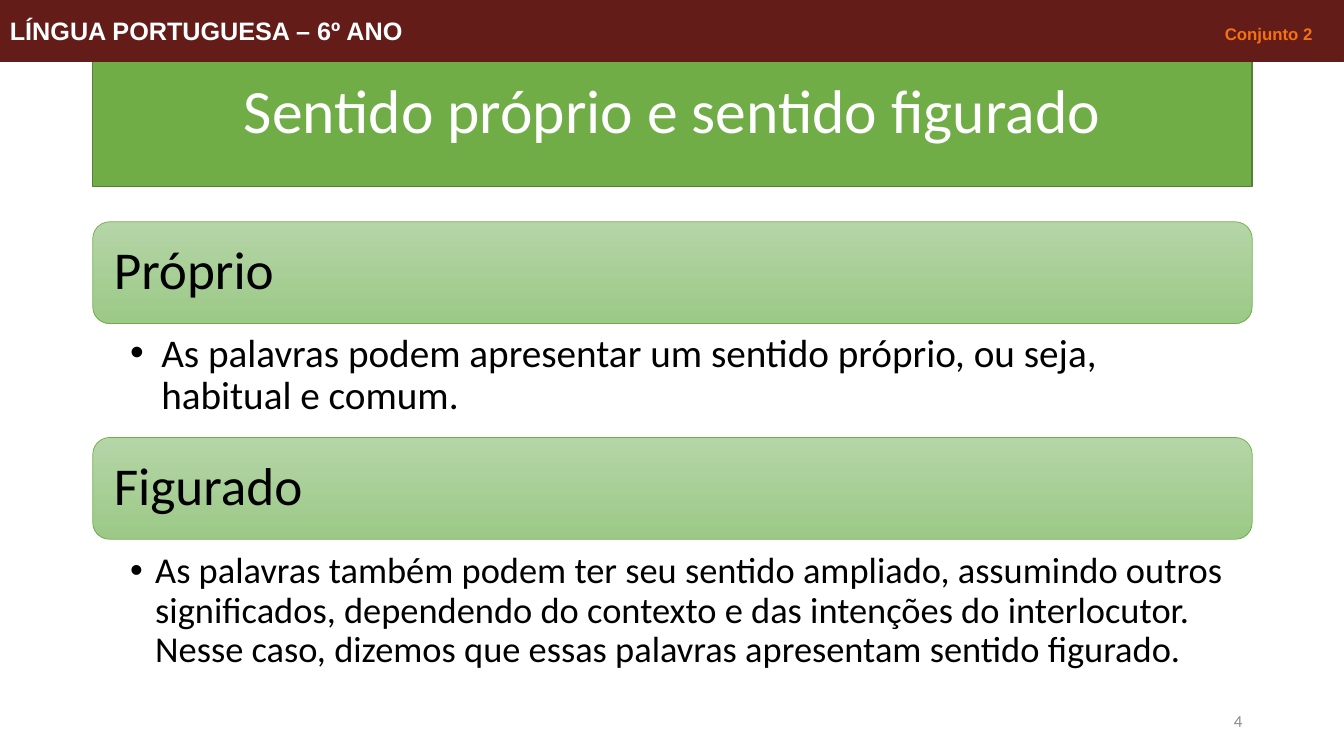
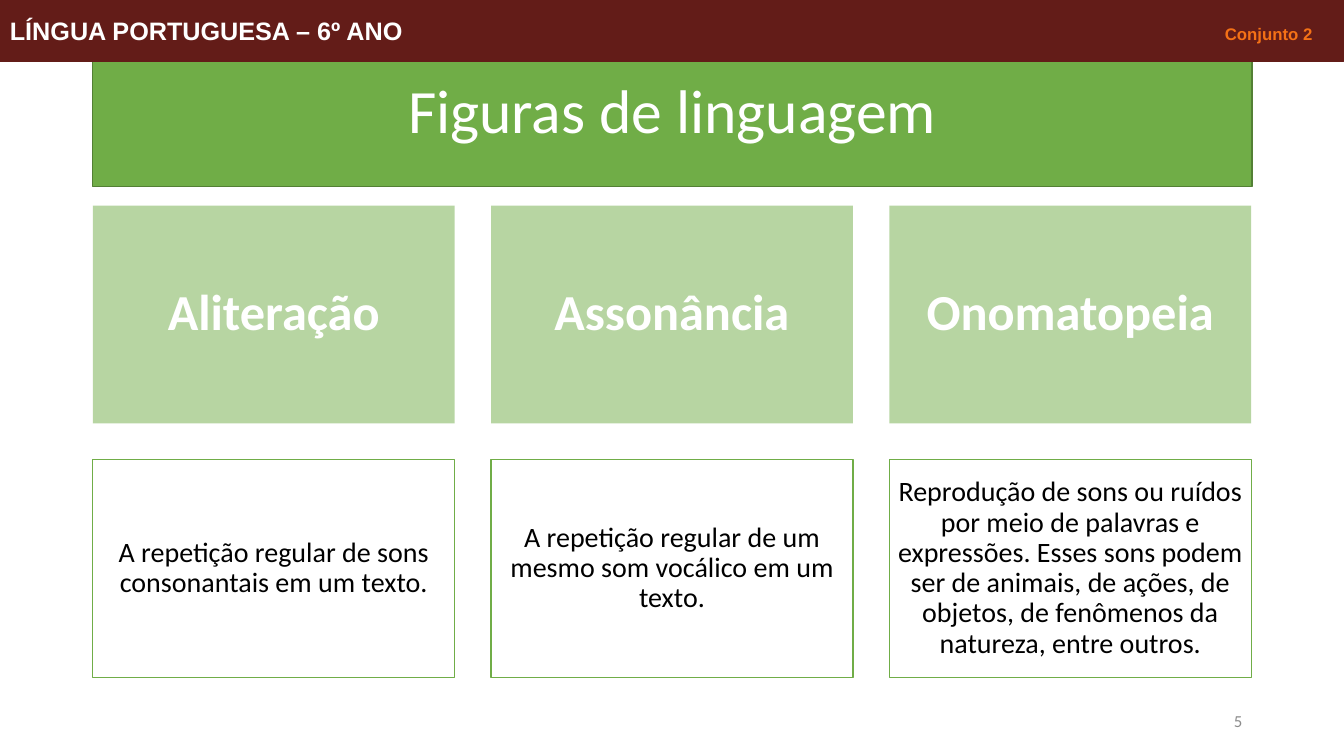
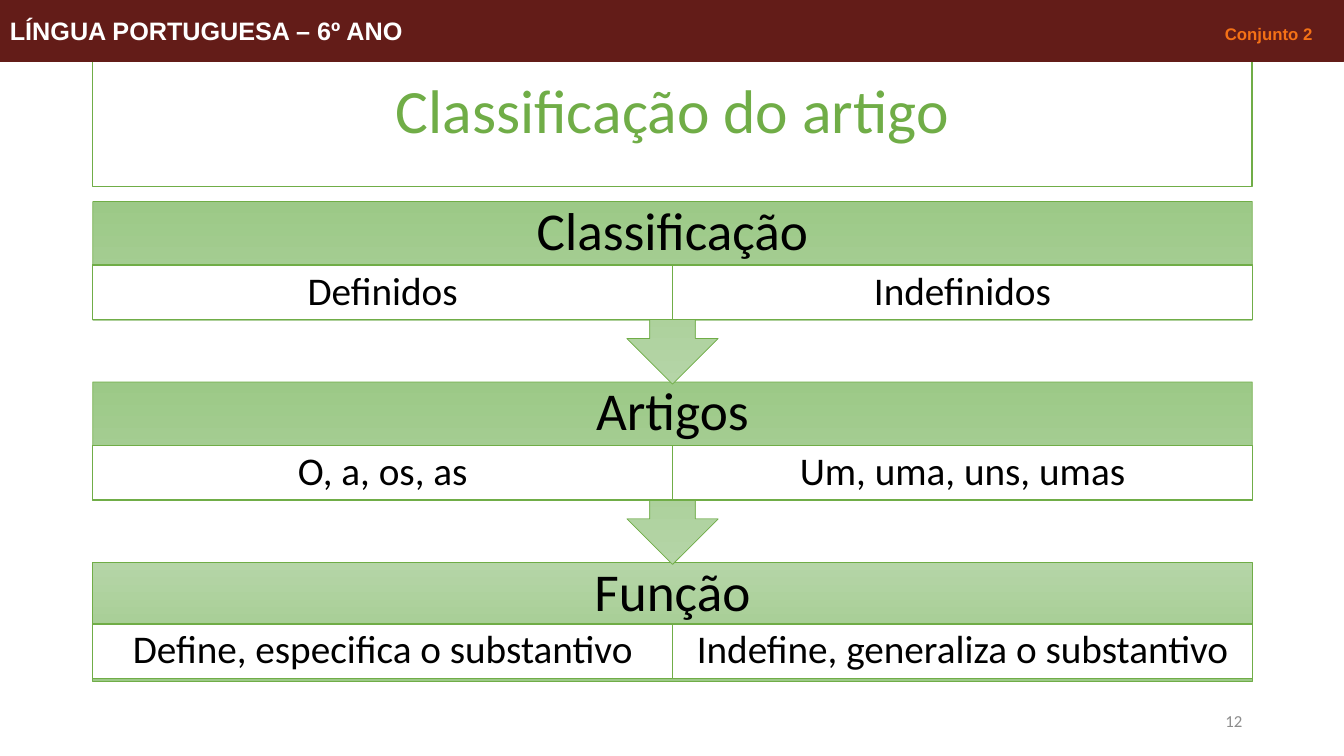
"""Builds three grammar slides with a shared header band, title box and page number."""
from lxml import etree
from pptx import Presentation
from pptx.dml.color import RGBColor
from pptx.enum.shapes import MSO_SHAPE
from pptx.enum.text import MSO_ANCHOR, PP_ALIGN
from pptx.oxml.ns import qn
from pptx.util import Inches, Pt

RECT = MSO_SHAPE.RECTANGLE
ROUND = MSO_SHAPE.ROUNDED_RECTANGLE
CALLOUT = MSO_SHAPE.UP_ARROW_CALLOUT
LEFT, CENTER, RIGHT = PP_ALIGN.LEFT, PP_ALIGN.CENTER, PP_ALIGN.RIGHT
TOP, MIDDLE = MSO_ANCHOR.TOP, MSO_ANCHOR.MIDDLE

COLORS = {
    "white": "FFFFFF",
    "black": "000000",
    "green": "70AD47",
    "edge": "538035",
    "light": "B5D5A7",
    "dark": "9CC987",
    "band": "631C18",
    "orange": "F47116",
    "gray": "8C8C8C",
}
MARGIN, WIDTH = 0.92, 11.5
PAD = (0.1, 0.05, 0.1, 0.05)


def rgb(name):
    return RGBColor.from_string(COLORS[name])


def add_box(slide, area, fill, line=None, weight=1, kind=RECT):
    box = slide.shapes.add_shape(kind, *map(Inches, area))
    box.shadow.inherit = False
    if fill == "shade":
        box.fill.gradient()
        box.fill.gradient_angle = 270
        for stop, name in zip(box.fill.gradient_stops, ("light", "dark")):
            stop.color.rgb = rgb(name)
    else:
        box.fill.solid()
        box.fill.fore_color.rgb = rgb(fill)
    if line:
        box.line.color.rgb = rgb(line)
        box.line.width = Pt(weight)
    else:
        box.line.fill.background()
    return box


def add_label(slide, area):
    return slide.shapes.add_textbox(*map(Inches, area))


def fade(box, share):
    color = box.fill._xPr.find(qn("a:solidFill"))[0]
    etree.SubElement(color, qn("a:alpha"), val=str(share * 1000))


def add_run(para, text, size, color, bold=False, font="Calibri"):
    run = para.add_run()
    run.text = text
    run.font.name = font
    run.font.size = Pt(size)
    run.font.bold = bold
    run.font.color.rgb = rgb(color)


def set_frame(box, align=CENTER, anchor=MIDDLE, pad=PAD, space=0.9):
    frame = box.text_frame
    frame.word_wrap = True
    frame.vertical_anchor = anchor
    frame.margin_left, frame.margin_top, frame.margin_right, frame.margin_bottom = map(Inches, pad)
    para = frame.paragraphs[0]
    para.alignment = align
    para.line_spacing = space
    return para


def set_bullet(para, indent):
    props = para._p.get_or_add_pPr()
    props.set("marL", str(Inches(indent)))
    props.set("indent", str(-Inches(indent)))
    etree.SubElement(props, qn("a:buFont"), typeface="Arial")
    etree.SubElement(props, qn("a:buChar"), char="•")


def set_tab(para, place):
    tabs = etree.SubElement(para._p.get_or_add_pPr(), qn("a:tabLst"))
    etree.SubElement(tabs, qn("a:tab"), pos=str(Inches(place)), algn="l")


def add_title(slide, text, fill="green", line="edge", color="white"):
    box = add_box(slide, (MARGIN, 0.4, WIDTH, 1.45), fill, line)
    add_run(set_frame(box), text, 44, color)


def add_band(slide):
    box = add_box(slide, (0, 0, 13.33, 0.61), "band", "band", 0.75)
    para = set_frame(box, LEFT, space=1.0)
    set_tab(para, 12.05)
    add_run(para, "LÍNGUA PORTUGUESA – 6º ANO\t", 18, "white", True, "Arial")
    add_run(para, "Conjunto 2", 12, "orange", True, "Arial")


def add_page(slide, number):
    label = add_label(slide, (9.42, 6.95, 3, 0.4))
    add_run(set_frame(label, RIGHT, space=1.0), str(number), 12, "gray")


def add_sense(slide, top, name):
    box = add_box(slide, (MARGIN, top, WIDTH, 1.01), "shade", "green", 0.5, ROUND)
    add_run(set_frame(box, LEFT, pad=(0.16,) * 4), name, 38, "black")


def add_point(slide, top, height, text, size, indent, pad):
    label = add_label(slide, (MARGIN, top, WIDTH, height))
    para = set_frame(label, LEFT, TOP, pad)
    set_bullet(para, indent)
    add_run(para, text, size, "black")


def add_figure(slide, left, name, text):
    width, height = 3.59, 2.16
    head = add_box(slide, (left, 2.04, width, height), "green")
    fade(head, 50)
    add_run(set_frame(head, pad=(0.15,) * 4), name, 36, "white", True)
    body = add_box(slide, (left, 4.56, width, height), "white", "green")
    add_run(set_frame(body, pad=(0.08,) * 4), text, 20, "black")


def add_step(slide, top, cell_top, name, cells, last):
    area = (MARGIN, top, WIDTH, 1.18 if last else 1.81)
    box = add_box(slide, area, "shade", "green", 0.5, RECT if last else CALLOUT)
    if not last:
        box.rotation = 180
    label = add_label(slide, (MARGIN, top, WIDTH, 0.63))
    add_run(set_frame(label, pad=(0.3, 0, 0.3, 0)), name, 38, "black")
    half = WIDTH / 2
    for col, text in enumerate(cells):
        cell = add_box(slide, (MARGIN + col * half, cell_top, half, 0.54), "white", "green")
        add_run(set_frame(cell, pad=(0.22, 0.04, 0.22, 0.04)), text, 28, "black")


def draw_senses(slide):
    add_title(slide, "Sentido próprio e sentido figurado")
    add_sense(slide, 2.2, "Próprio")
    add_point(slide, 3.27, 1.13,
              "As palavras podem apresentar um sentido próprio, ou seja, habitual e comum.",
              28, 0.31, (0.37, 0.04, 0.22, 0.04))
    add_sense(slide, 4.34, "Figurado")
    add_point(slide, 5.43, 1.31,
              "As palavras também podem ter seu sentido ampliado, assumindo outros significados, "
              "dependendo do contexto e das intenções do interlocutor. Nesse caso, dizemos que "
              "essas palavras apresentam sentido figurado.",
              26, 0.25, (0.37, 0.05, 0.26, 0.05))


def draw_figures(slide):
    add_title(slide, "Figuras de linguagem")
    figures = [
        ("Aliteração", "A repetição regular de sons consonantais em um texto."),
        ("Assonância", "A repetição regular de um mesmo som vocálico em um texto."),
        ("Onomatopeia", "Reprodução de sons ou ruídos por meio de palavras e expressões. "
         "Esses sons podem ser de animais, de ações, de objetos, de fenômenos da natureza, "
         "entre outros."),
    ]
    for col, (name, text) in enumerate(figures):
        add_figure(slide, MARGIN + col * 3.95, name, text)


def draw_steps(slide):
    add_title(slide, "Classificação do artigo", "white", "green", "green")
    steps = [
        (5.58, 6.19, "Função",
         ("Define, especifica o substantivo", "Indefine, generaliza o substantivo")),
        (3.79, 4.42, "Artigos", ("O, a, os, as", "Um, uma, uns, umas")),
        (2, 2.63, "Classificação", ("Definidos", "Indefinidos")),
    ]
    for row, step in enumerate(steps):
        add_step(slide, *step, last=row == 0)


def main():
    deck = Presentation()
    deck.slide_width, deck.slide_height = Inches(13.33), Inches(7.5)
    for number, draw in ((4, draw_senses), (5, draw_figures), (12, draw_steps)):
        slide = deck.slides.add_slide(deck.slide_layouts[6])
        draw(slide)
        add_page(slide, number)
        add_band(slide)
    deck.save("out.pptx")


if __name__ == "__main__":
    main()
